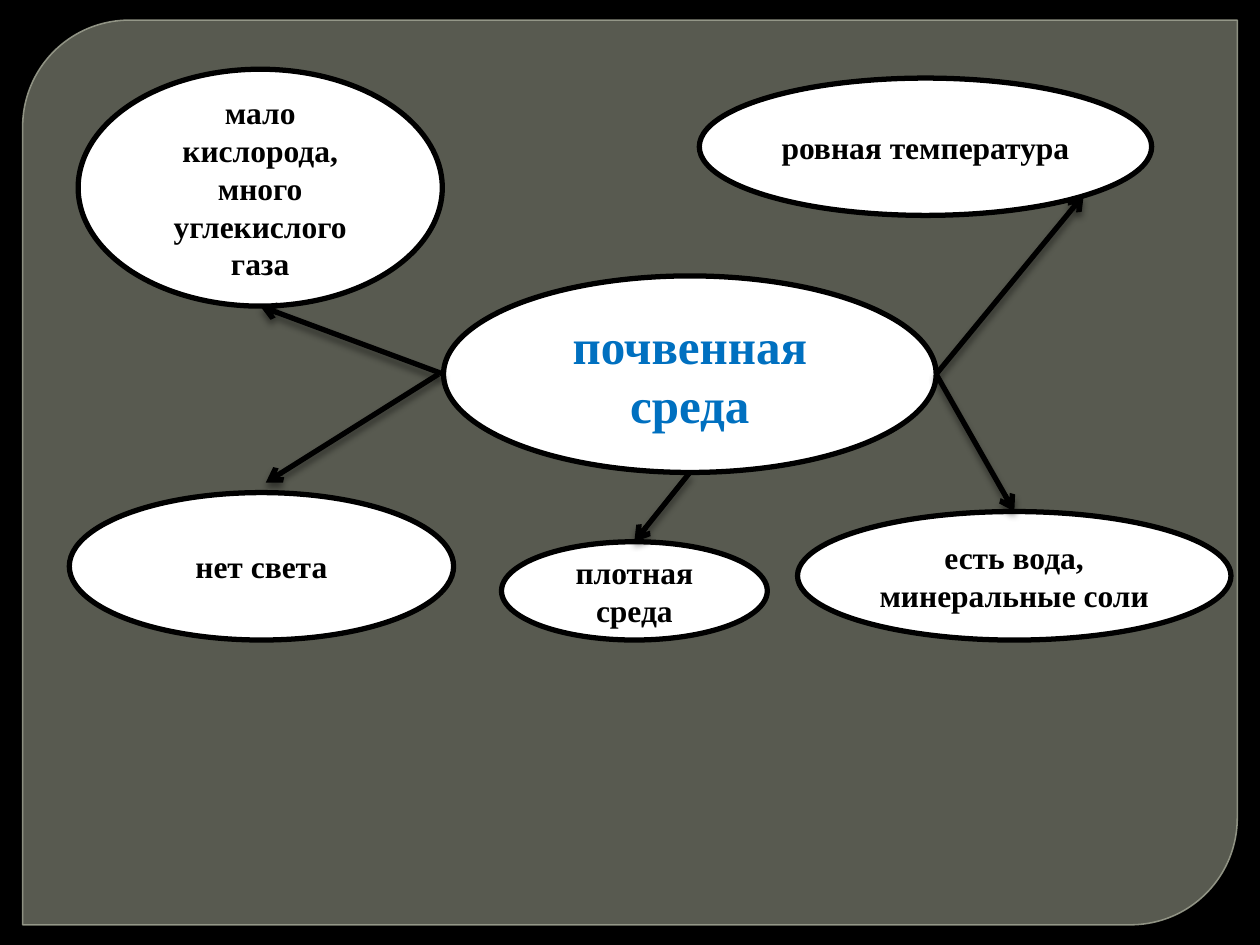
from lxml.etree import SubElement
from pptx import Presentation
from pptx.dml.color import RGBColor
from pptx.enum.shapes import MSO_CONNECTOR, MSO_SHAPE
from pptx.enum.text import MSO_ANCHOR, PP_ALIGN
from pptx.oxml import parse_xml
from pptx.oxml.ns import nsdecls, qn
from pptx.util import Inches, Pt

WIDTH, HEIGHT = Inches(10), Inches(7.5)
BLACK = RGBColor(0x00, 0x00, 0x00)
WHITE = RGBColor(0xFF, 0xFF, 0xFF)
BLUE = RGBColor(0x00, 0x70, 0xC0)
PANEL_FILL = RGBColor(0x88, 0x8B, 0x7B)
PANEL_LINE = RGBColor(0x9D, 0xA0, 0x90)

TOPIC_FONT = {"name": "Times New Roman", "size": Pt(28), "bold": True}
TRAIT_FONT = {**TOPIC_FONT, "size": Pt(18)}

# Boxes are left, top, width, height in percent of the slide.
PANEL = (1.8, 2.13, 96.4, 95.73)
TOPIC = (35.2, 29.2, 39.1, 20.8)
OXYGEN = (6.2, 7.33, 28.9, 25.07)
TEMPERATURE = (55.5, 8.27, 35.9, 14.53)
LIGHT = (5.5, 52.13, 30.5, 15.6)
WATER = (63.3, 54.13, 34.4, 13.6)
DENSITY = (39.8, 57.33, 21.1, 10.4)
TRAITS = [
    (OXYGEN, "мало кислорода, много углекислого газа"),
    (TEMPERATURE, "ровная температура"),
    (LIGHT, "нет света"),
    (WATER, "есть вода, минеральные соли"),
    (DENSITY, "плотная среда"),
]

TOP, LEFT, BOTTOM, RIGHT = (0.5, 0), (0, 0.5), (0.5, 1), (1, 0.5)
BOTTOM_RIGHT = (0.85, 0.85)

SHADOW = (
    f'<a:effectLst {nsdecls("a")}>'
    '<a:outerShdw blurRad="50800" dist="38100" dir="5400000" rotWithShape="0">'
    '<a:srgbClr val="000000"><a:alpha val="43000"/></a:srgbClr>'
    "</a:outerShdw></a:effectLst>"
)


def share(x, y):
    return int(WIDTH * x / 100), int(HEIGHT * y / 100)


def site(box, position):
    x, y, w, h = box
    return x + w * position[0], y + h * position[1]


def add_alpha(fill_parent, percent):
    color = fill_parent.find(qn("a:solidFill"))[0]
    SubElement(color, qn("a:alpha"), val=str(percent * 1000))


def add_box(s, kind, box, fill, line, width):
    sp = s.shapes.add_shape(kind, *share(*box[:2]), *share(*box[2:]))
    sp.shadow.inherit = False
    sp.fill.solid()
    sp.fill.fore_color.rgb = fill
    sp.line.color.rgb = line
    sp.line.width = Pt(width)
    return sp


def add_panel(s):
    sp = add_box(s, MSO_SHAPE.ROUND_2_DIAG_RECTANGLE, PANEL, PANEL_FILL, PANEL_LINE, 0.87)
    sp.adjustments[0] = 0.118
    sp.adjustments[1] = 0
    props = sp._element.spPr
    add_alpha(props, 65)
    add_alpha(props.find(qn("a:ln")), 88)


def add_ellipse(s, box, text, font, color):
    sp = add_box(s, MSO_SHAPE.OVAL, box, WHITE, BLACK, 3)
    tf = sp.text_frame
    tf.word_wrap = True
    tf.vertical_anchor = MSO_ANCHOR.MIDDLE
    p = tf.paragraphs[0]
    p.alignment = PP_ALIGN.CENTER
    r = p.add_run()
    r.text = text
    for key, value in font.items():
        setattr(r.font, key, value)
    r.font.color.rgb = color


def add_arrow(s, start, end):
    cxn = s.shapes.add_connector(MSO_CONNECTOR.STRAIGHT, *share(*start), *share(*end))
    cxn.line.color.rgb = BLACK
    cxn.line.width = Pt(3)
    SubElement(cxn.line._get_or_add_ln(), qn("a:tailEnd"), type="arrow")
    cxn._element.spPr.append(parse_xml(SHADOW))


def main():
    prs = Presentation()
    prs.slide_width, prs.slide_height = WIDTH, HEIGHT
    s = prs.slides.add_slide(prs.slide_layouts[6])
    s.background.fill.solid()
    s.background.fill.fore_color.rgb = BLACK

    add_panel(s)
    add_ellipse(s, TOPIC, "почвенная среда", TOPIC_FONT, BLUE)
    for box, text in TRAITS:
        add_ellipse(s, box, text, TRAIT_FONT, BLACK)

    arrows = [
        (site(TOPIC, LEFT), site(OXYGEN, BOTTOM)),
        ((34.8, 39.6), (21.1, 51.07)),
        (site(TOPIC, RIGHT), site(TEMPERATURE, BOTTOM_RIGHT)),
        (site(TOPIC, RIGHT), site(WATER, TOP)),
        (site(TOPIC, BOTTOM), site(DENSITY, TOP)),
    ]
    for start, end in arrows:
        add_arrow(s, start, end)

    prs.save("out.pptx")


if __name__ == "__main__":
    main()
